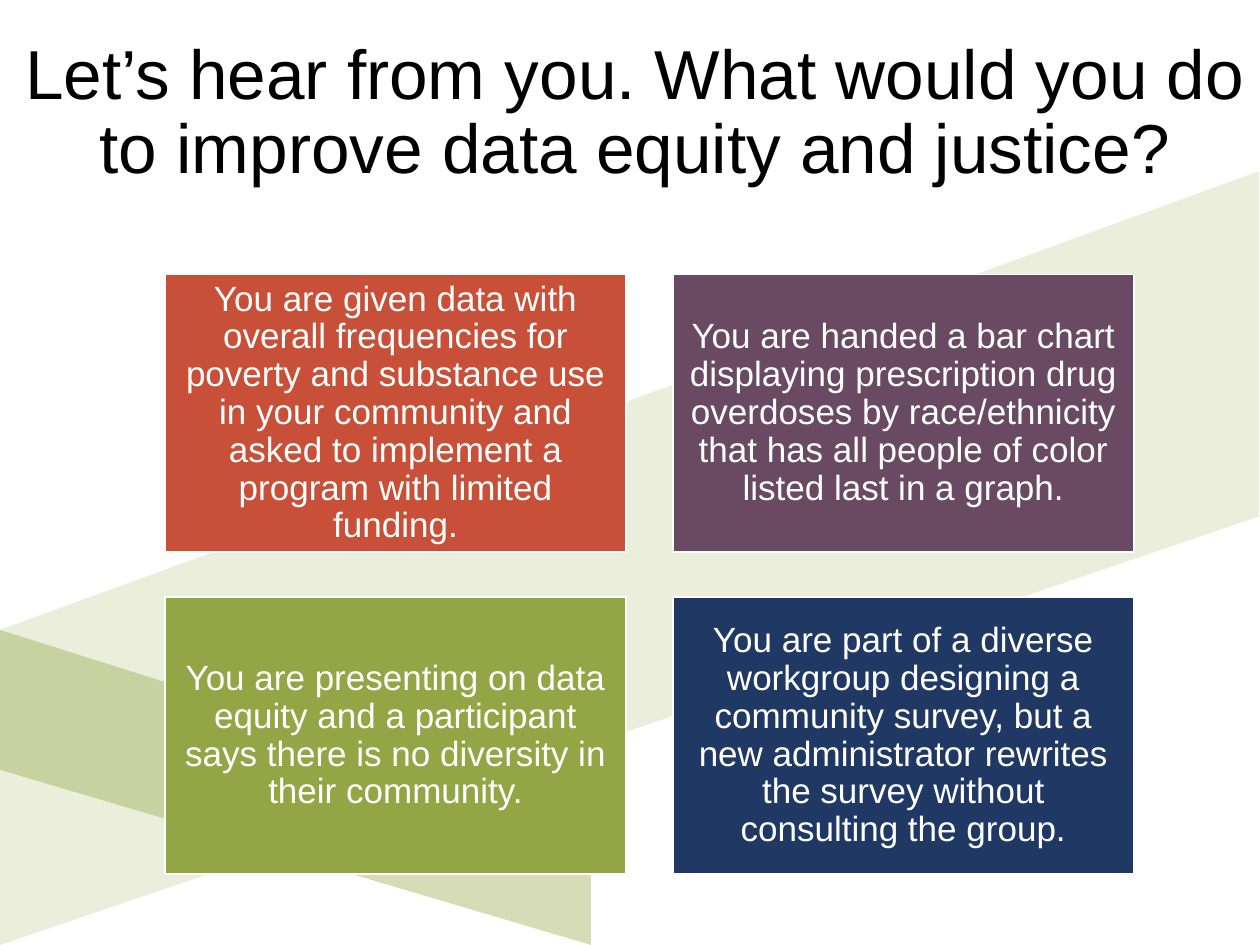
from pptx import Presentation, util as u
from pptx.dml.color import RGBColor
from pptx.enum import shapes, text
from pptx.oxml.ns import qn
from lxml import etree

COLORS = {"red": "C85038", "plum": "6A4A62", "green": "94A545",
          "navy": "203864", "white": "FFFFFF", "black": "000000"}

prs = Presentation()
prs.slide_width, prs.slide_height = u.Inches(10), u.Inches(7.5)
slide = prs.slides.add_slide(prs.slide_layouts[6])


def paint(fill, color, alpha=100):
    """Set a solid fill, with alpha as percent opacity."""
    fill.solid()
    fill.fore_color.rgb = RGBColor.from_string(COLORS[color])
    if alpha < 100:
        tint = fill._xPr.find(qn("a:solidFill"))[0]
        etree.SubElement(tint, qn("a:alpha"), val=str(alpha * 1000))


def write_centred(frame, words, size, color):
    frame.word_wrap = True
    frame.vertical_anchor = text.MSO_ANCHOR.MIDDLE
    line = frame.paragraphs[0]
    line.alignment = text.PP_ALIGN.CENTER
    line.line_spacing = 0.9
    run = line.add_run()
    run.text = words
    run.font.name = "Arial"
    run.font.size = u.Pt(size)
    run.font.color.rgb = RGBColor.from_string(COLORS[color])


# Crossing background bands
bands = [
    ([(0, 5), (9.99, 1.36), (9.99, 4.1), (0, 7.5)], 19),
    ([(4.69, 6.48), (0, 5), (0, 6.11), (4.69, 7.5)], 39),
]
for corners, opacity in bands:
    start, *others = [(u.Inches(x), u.Inches(y)) for x, y in corners]
    outline = slide.shapes.build_freeform(*start)
    outline.add_line_segments(others, close=True)
    band = outline.convert_to_shape()
    band.shadow.inherit = False
    band.line.fill.background()
    paint(band.fill, "green", opacity)

question = slide.shapes.add_textbox(u.Inches(0.08), u.Inches(0.18), u.Inches(9.92), u.Inches(1.45))
write_centred(question.text_frame,
              "Let’s hear from you. What would you do to improve data equity and justice?",
              39.6, "black")

# Scenario cards in a two by two grid
LEFT, TOP, CARD_W, CARD_H = 1.31, 2.18, 3.66, 2.2
GAP_X, GAP_Y = 0.37, 0.36
scenarios = [
    ("red", "You are given data with overall frequencies for poverty and substance use in your "
            "community and asked to implement a program with limited funding."),
    ("plum", "You are handed a bar chart displaying prescription drug overdoses by race/ethnicity "
             "that has all people of color listed last in a graph."),
    ("green", "You are presenting on data equity and a participant says there is no diversity in "
              "their community."),
    ("navy", "You are part of a diverse workgroup designing a community survey, but a new "
             "administrator rewrites the survey without consulting the group."),
]
for index, (color, scenario) in enumerate(scenarios):
    row, column = divmod(index, 2)
    card = slide.shapes.add_shape(
        shapes.MSO_SHAPE.RECTANGLE,
        u.Inches(LEFT + column * (CARD_W + GAP_X)), u.Inches(TOP + row * (CARD_H + GAP_Y)),
        u.Inches(CARD_W), u.Inches(CARD_H))
    card.shadow.inherit = False
    paint(card.fill, color)
    paint(card.line.fill, "white")
    card.line.width = u.Pt(1)
    frame = card.text_frame
    frame.margin_left = frame.margin_right = u.Inches(0.08)
    frame.margin_top = frame.margin_bottom = u.Inches(0.08)
    write_centred(frame, scenario, 20, "white")

prs.save("out.pptx")
